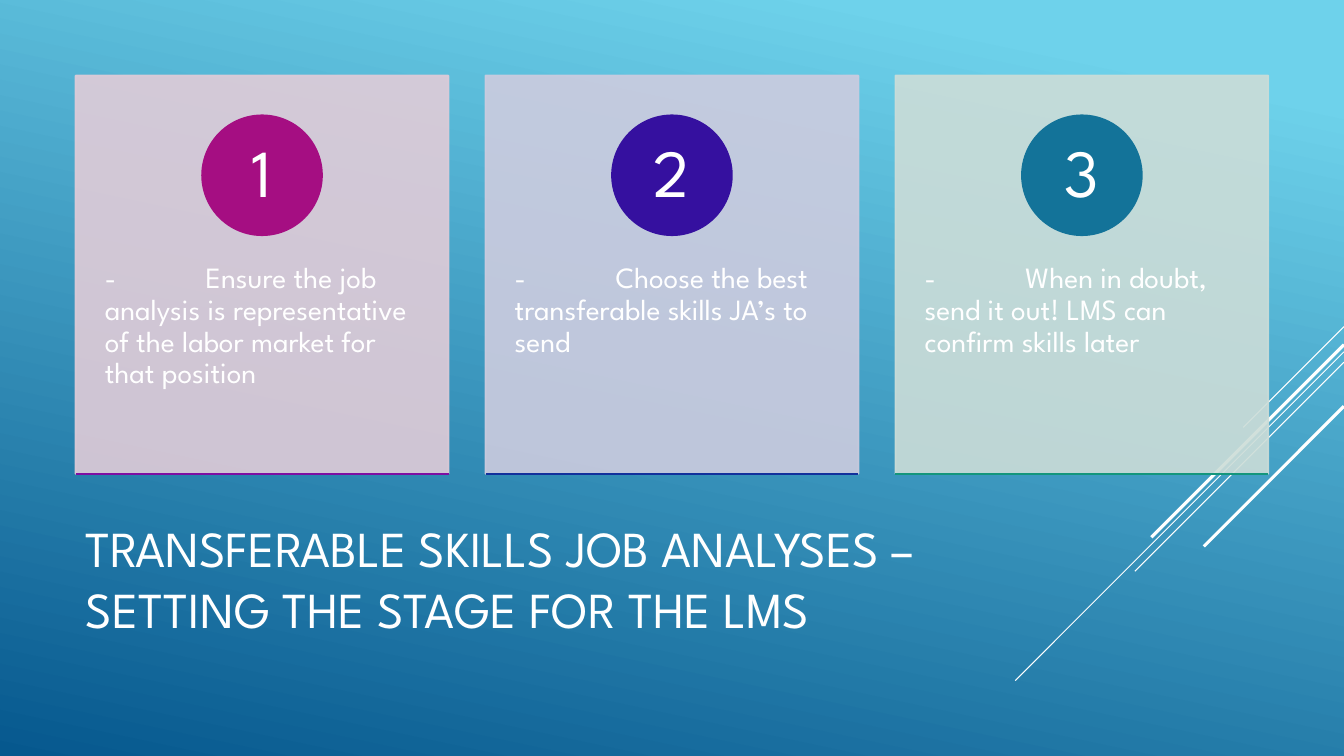
from dataclasses import dataclass

from lxml.etree import SubElement
from pptx import Presentation
from pptx.dml.color import RGBColor
from pptx.enum.shapes import MSO_CONNECTOR as Connector, MSO_SHAPE as Preset
from pptx.enum.text import MSO_ANCHOR as Anchor, MSO_AUTO_SIZE as AutoSize, PP_ALIGN as Align
from pptx.oxml.ns import qn
from pptx.slide import Slide
from pptx.text.text import TextFrame
from pptx.util import Pt

FONT = "League Spartan"
WHITE = "FFFFFF"
CARD_LEFT, CARD_TOP, CARD_WIDTH, CARD_HEIGHT = 54, 54, 266.4, 284.4
CARD_STEP = 292.8
CIRCLE_TOP, CIRCLE_SIZE, NUMBER_SIZE = 82.4, 85.6, 60.5
BODY_TOP, BODY_HEIGHT, BODY_TAB = 162.2, 170.6, 72
OUTLINE_WIDTH = 1.25


@dataclass
class Card:
    text: str
    panel: str
    circle: str
    rule: str


@dataclass
class Streak:
    right_y: float
    length: float
    weight: float


CARDS = [
    Card("-\tEnsure the job analysis is representative of the labor market for that position",
         "E1CCD8", "A50E82", "7D0FA2"),
    Card("-\tChoose the best transferable skills JA’s to send", "CDCCDF", "35109F", "12319C"),
    Card("-\tWhen in doubt, send it out! LMS can confirm skills later",
         "CCDDD8", "137399", "14967C"),
]

STREAKS = [
    Streak(233.3, 72, 0.75),
    Streak(251.3, 234.8, 0.75),
    Streak(258.7, 149.4, 0.75),
    Streak(246.2, 137.6, 2.25),
    Streak(290.2, 100.1, 2.25),
]


def color(code: str) -> RGBColor:
    return RGBColor.from_string(code)


def set_alpha(fill_parent, percent: int) -> None:
    for tone in fill_parent.iter(qn("a:srgbClr")):
        SubElement(tone, qn("a:alpha"), val=str(percent * 1000))


def add_line(page: Slide, start: tuple[float, float], end: tuple[float, float],
             code: str, weight: float) -> None:
    line = page.shapes.add_connector(Connector.STRAIGHT, *map(Pt, start + end))
    line.line.color.rgb = color(code)
    line.line.width = Pt(weight)
    SubElement(line._element.spPr, qn("a:effectLst"))


def add_block(page: Slide, preset: Preset, left: float, top: float, width: float,
              height: float, code: str, opacity: int = 100) -> None:
    block = page.shapes.add_shape(preset, Pt(left), Pt(top), Pt(width), Pt(height))
    block.shadow.inherit = False
    block.fill.solid()
    block.fill.fore_color.rgb = color(code)
    block.line.color.rgb = color(code)
    block.line.width = Pt(OUTLINE_WIDTH)
    if opacity < 100:
        set_alpha(block._element.spPr, opacity)


def write(frame: TextFrame, text: str, size: float, align: Align, anchor: Anchor,
          spacing: float, side: float, edge: float) -> None:
    frame.word_wrap = True
    frame.auto_size = AutoSize.NONE
    frame.vertical_anchor = anchor
    frame.margin_left = frame.margin_right = Pt(side)
    frame.margin_top = frame.margin_bottom = Pt(edge)
    para = frame.paragraphs[0]
    para.text = text
    para.alignment = align
    para.line_spacing = spacing
    para.font.name = FONT
    para.font.size = Pt(size)
    para.font.color.rgb = color(WHITE)


def add_tab_stop(frame: TextFrame, position: float) -> None:
    properties = frame.paragraphs[0]._p.get_or_add_pPr()
    stops = SubElement(properties, qn("a:tabLst"))
    SubElement(stops, qn("a:tab"), pos=str(Pt(position)), algn="l")
    properties.find(qn("a:defRPr")).addprevious(stops)


def add_card(page: Slide, index: int, card: Card) -> None:
    left = CARD_LEFT + index * CARD_STEP
    middle = left + CARD_WIDTH / 2
    bottom = CARD_TOP + CARD_HEIGHT
    add_block(page, Preset.RECTANGLE, left, CARD_TOP, CARD_WIDTH, CARD_HEIGHT, card.panel, 90)

    body = page.shapes.add_textbox(Pt(left), Pt(BODY_TOP), Pt(CARD_WIDTH), Pt(BODY_HEIGHT))
    write(body.text_frame, card.text, 21, Align.LEFT, Anchor.TOP, 0.9, 20.9, 25.9)
    add_tab_stop(body.text_frame, BODY_TAB)

    add_block(page, Preset.OVAL, middle - CIRCLE_SIZE / 2, CIRCLE_TOP,
              CIRCLE_SIZE, CIRCLE_SIZE, card.circle)
    inset = (CIRCLE_SIZE - NUMBER_SIZE) / 2
    number = page.shapes.add_textbox(Pt(middle - NUMBER_SIZE / 2), Pt(CIRCLE_TOP + inset),
                                     Pt(NUMBER_SIZE), Pt(NUMBER_SIZE))
    write(number.text_frame, str(index + 1), 48, Align.CENTER, Anchor.MIDDLE, 0.9, 6.5, 0.7)

    add_line(page, (left, bottom), (left + CARD_WIDTH, bottom), card.rule, OUTLINE_WIDTH)


def paint_background(page: Slide) -> None:
    fill = page.background.fill
    fill.gradient()
    fill.gradient_angle = 258
    for stop, position, code in zip(fill.gradient_stops, (0.1, 1), ("6ED2EB", "06588E")):
        stop.position = position
        stop.color.rgb = color(code)


def main() -> None:
    deck = Presentation()
    deck.slide_width, deck.slide_height = Pt(960), Pt(540)
    page = deck.slides.add_slide(deck.slide_layouts[5])
    paint_background(page)

    for streak in STREAKS:
        add_line(page, (960, streak.right_y),
                 (960 - streak.length, streak.right_y + streak.length), WHITE, streak.weight)

    title = page.shapes.title
    title.left, title.top, title.width, title.height = Pt(54), Pt(353.5), Pt(671.8), Pt(118.8)
    write(title.text_frame, "TRANSFERABLE SKILLS JOB ANALYSES – SETTING THE STAGE FOR THE LMS",
          36, Align.LEFT, Anchor.MIDDLE, 1, 7.2, 3.6)

    for index, card in enumerate(CARDS):
        add_card(page, index, card)

    deck.save("out.pptx")


if __name__ == "__main__":
    main()
